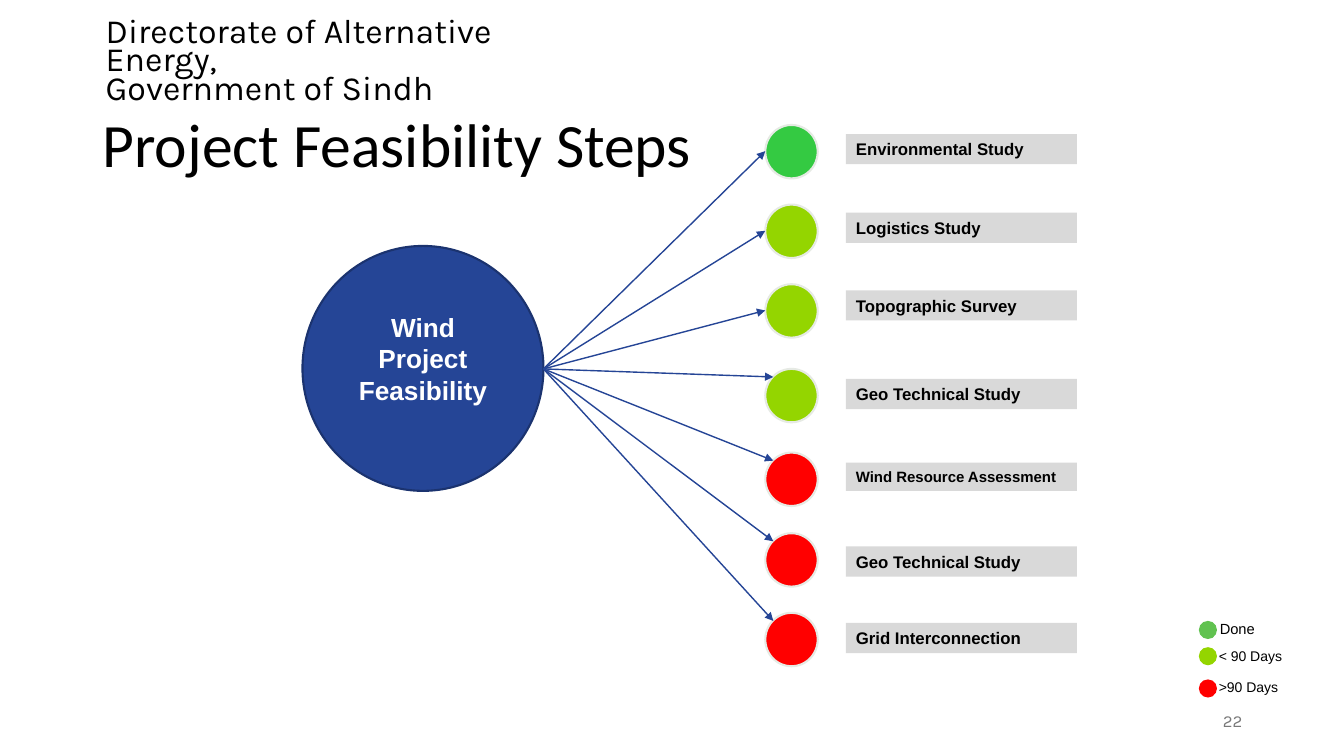
import pptx
import pptx.util
import pptx.dml.color
import pptx.enum.shapes
import pptx.enum.text
import pptx.oxml.ns
import lxml.etree

PX = 9144
SHAPE = pptx.enum.shapes.MSO_SHAPE
ALIGN = pptx.enum.text.PP_ALIGN
ANCHOR = pptx.enum.text.MSO_ANCHOR
COLORS = {
    "black": "000000", "white": "FFFFFF", "muted": "797979",
    "hub": "254596", "hub_edge": "1B336F", "dot_edge": "E6EAE4",
    "label": "D9D9D9", "done": "34CA42", "legend_done": "61C250",
    "soon": "94D500", "late": "FF0000",
}
DOT_W, DOT_H = 52, 53
STEPS = [
    ("Environmental Study", "done", 124, 133, 30, 12, "side"),
    ("Logistics Study", "soon", 203, 211, 30, 12, "side"),
    ("Topographic Survey", "soon", 282, 288, 30, 12, "side"),
    ("Geo Technical Study", "soon", 366, 376, 30, 12, "corner"),
    ("Wind Resource Assessment", "late", 449, 459, 28, 10.7, "corner"),
    ("Geo Technical Study", "late", 529, 542, 30, 12, "corner"),
    ("Grid Interconnection", "late", 608, 618, 30, 12, "corner"),
]
ENDS = {"side": (0, 26), "corner": (8, 8)}
LEGEND = [
    ("Done", "legend_done", 0, 11, -6, 10.5),
    ("< 90 Days", "soon", 26, 10, -5, 10),
    (">90 Days", "late", 58, 10, -6, 10),
]


def rgb(name):
    """Return the named colour."""
    return pptx.dml.color.RGBColor.from_string(COLORS[name])


def emu(*lengths):
    """Turn px lengths into EMU."""
    return [pptx.util.Emu(v * PX) for v in lengths]


def write(sp, lines, font, size, color, bold=False, align=ALIGN.LEFT,
          anchor=ANCHOR.TOP, spacing=1.0):
    """Fill a shape with evenly formatted paragraphs."""
    tf = sp.text_frame
    for key, value in {"word_wrap": True, "vertical_anchor": anchor}.items():
        setattr(tf, key, value)
    for i, line in enumerate(lines):
        p = tf.paragraphs[0] if i == 0 else tf.add_paragraph()
        for key, value in {"alignment": align, "line_spacing": spacing}.items():
            setattr(p, key, value)
        r = p.add_run()
        r.text = line
        formats = {"name": font, "size": pptx.util.Pt(size), "bold": bold}
        for key, value in formats.items():
            setattr(r.font, key, value)
        r.font.color.rgb = rgb(color)


def add_text(s, box, lines, font, size, color, **formats):
    """Place a text box."""
    write(s.shapes.add_textbox(*emu(*box)), lines, font, size, color, **formats)


def add_block(s, kind, box, fill, edge=None):
    """Place a filled preset shape."""
    sp = s.shapes.add_shape(kind, *emu(*box))
    sp.shadow.inherit = False
    sp.fill.solid()
    sp.fill.fore_color.rgb = rgb(fill)
    if edge:
        sp.line.color.rgb = rgb(edge)
        sp.line.width = pptx.util.Pt(1.5)
    else:
        sp.line.fill.background()
    return sp


def add_arrow(s, start, end):
    """Draw a thin arrow between two points."""
    sp = s.shapes.add_connector(
        pptx.enum.shapes.MSO_CONNECTOR.STRAIGHT, *emu(*start, *end))
    sp.line.color.rgb = rgb("hub")
    sp.line.width = pptx.util.Pt(1)
    qn = pptx.oxml.ns.qn
    lxml.etree.SubElement(sp.line._get_or_add_ln(), qn("a:tailEnd"), type="triangle")
    lxml.etree.SubElement(sp._element.spPr, qn("a:effectLst"))


def add_header(s, x, y, w, h):
    """Write the organisation, title and page number."""
    add_text(s, (x + 3, y, 464, 77),
             ["Directorate of Alternative Energy,", "Government of Sindh"],
             "Karla", 24.2, "black", anchor=ANCHOR.MIDDLE, spacing=0.7)
    add_text(s, (x, y + 84, w, 77), ["Project Feasibility Steps"],
             "Calibri", 44, "black", anchor=ANCHOR.MIDDLE, spacing=0.9)
    add_text(s, (x + w - 300, y + h - 40, 300, 40), ["22"], "Karla", 12, "muted",
             align=ALIGN.RIGHT, anchor=ANCHOR.MIDDLE)


def add_steps(s, x, y, w, h):
    """Draw the hub, its arrows and the labelled steps."""
    hub_y, hub_w, hub_h = y + 120, 239, 243
    dot_x, label_w = x + 459, 229
    add_block(s, SHAPE.OVAL, (x, hub_y, hub_w, hub_h), "hub", "hub_edge")
    add_text(s, (x + 41, hub_y + 60, 157, 104), ["Wind Project Feasibility"],
             "Arial", 18.7, "white", bold=True, align=ALIGN.CENTER)
    for text, color, dot_y, label_y, label_h, size, end in STEPS:
        add_block(s, SHAPE.OVAL, (dot_x, dot_y, DOT_W, DOT_H), color, "dot_edge")
        sp = add_block(s, SHAPE.RECTANGLE,
                       (x + w - label_w, label_y, label_w, label_h), "label")
        write(sp, [text], "Arial", size, "black", bold=True)
        dx, dy = ENDS[end]
        add_arrow(s, (x + hub_w, hub_y + 122), (dot_x + dx, dot_y + dy))


def add_legend(s, x, y, w, h):
    """Draw the status key."""
    for text, color, dy, text_dx, text_dy, size in LEGEND:
        add_block(s, SHAPE.OVAL, (x, y + dy, 18, 18), color)
        add_text(s, (x + text_dx, y + dy + text_dy, w - text_dx, 27), [text],
                 "Arial", size, "black")


def main():
    """Build and save the slide."""
    prs = pptx.Presentation()
    prs.slide_width, prs.slide_height = emu(1333, 750)
    s = prs.slides.add_slide(prs.slide_layouts[6])
    add_header(s, 92, 24, 1150, 711)
    add_steps(s, 300, 124, 768, 537)
    add_legend(s, 1189, 616, 140, 79)
    prs.save("out.pptx")


if __name__ == "__main__":
    main()
